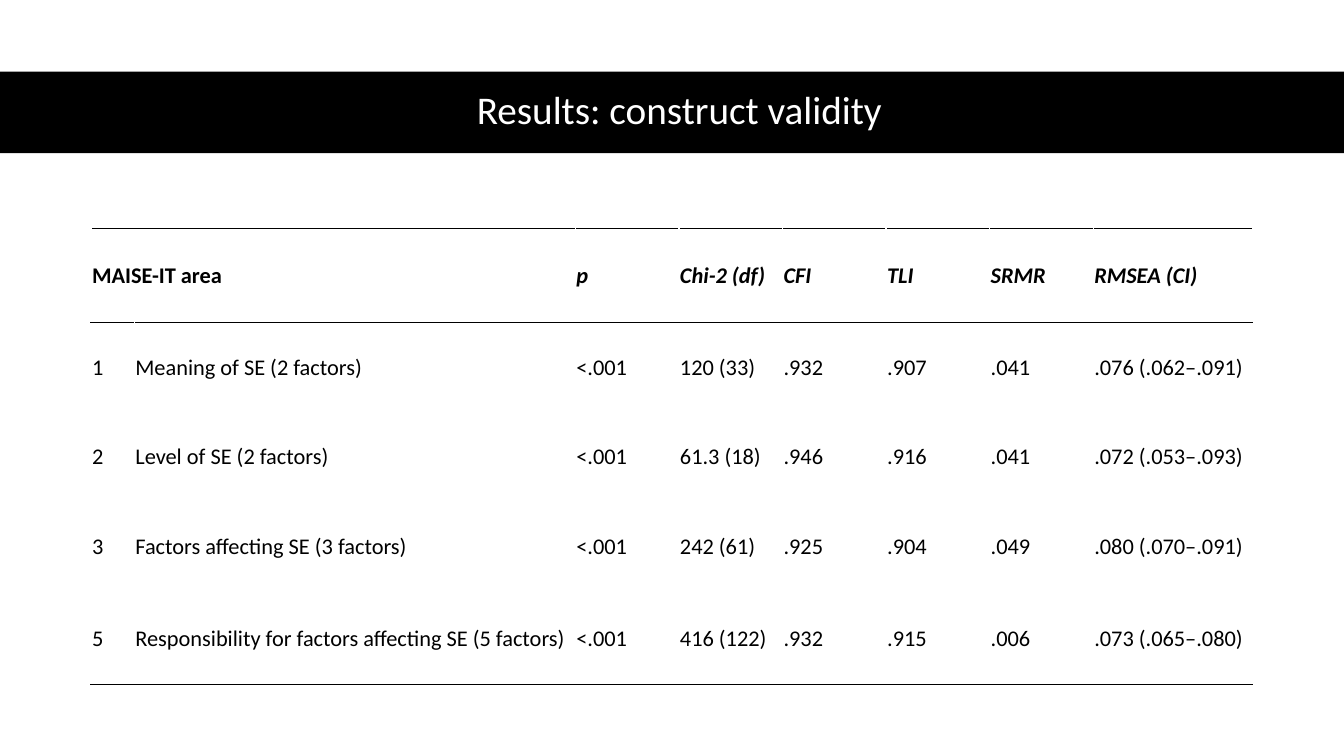
from lxml import etree
from pptx import Presentation
from pptx.enum import shapes, text
from pptx.dml.color import RGBColor
from pptx.oxml import ns
from pptx.util import Pt

TITLE = "Results: construct validity"
HEADER = ["MAISE-IT area", "", "p", "Chi-2 (df)", "CFI", "TLI", "SRMR", "RMSEA (CI)"]
AREAS = [
    ["1", "Meaning of SE (2 factors)", "<.001", "120 (33)", ".932", ".907", ".041", ".076 (.062–.091)"],
    ["2", "Level of SE (2 factors)", "<.001", "61.3 (18)", ".946", ".916", ".041", ".072 (.053–.093)"],
    ["3", "Factors affecting SE (3 factors)", "<.001", "242 (61)", ".925", ".904", ".049", ".080 (.070–.091)"],
    ["5", "Responsibility for factors affecting SE (5 factors)", "<.001", "416 (122)", ".932", ".915", ".006",
     ".073 (.065–.080)"],
]
COLORS = {"ink": "000000", "paper": "FFFFFF"}
FONT = "Calibri"
SLIDE_WIDTH, SLIDE_HEIGHT = 960, 540
BAND_TOP, BAND_HEIGHT = 51.2, 58.2
TABLE_LEFT, TABLE_TOP = 65, 163.5
COLUMN_WIDTHS = [31, 315] + [74] * 5 + [113.5]
ROW_HEIGHTS = [66.8, 64, 64, 64, 66.8]
INSET = 0.75


def color(name):
    return RGBColor.from_string(COLORS[name])


def write(paragraph, words, size, ink, bold=False, italic=False):
    run = paragraph.add_run()
    run.text = words
    font = run.font
    font.name, font.size, font.bold, font.italic = FONT, Pt(size), bold, italic
    font.color.rgb = color(ink)


def add_border(cell, side):
    """Rule one edge of a cell; side is lnT or lnB."""
    properties = cell._tc.get_or_add_tcPr()
    line = etree.SubElement(properties, ns.qn("a:" + side), w=str(Pt(1)))
    fill = etree.SubElement(line, ns.qn("a:solidFill"))
    etree.SubElement(fill, ns.qn("a:srgbClr"), val=COLORS["ink"])


def add_title(slide):
    band = slide.shapes.add_shape(shapes.MSO_SHAPE.RECTANGLE, 0, Pt(BAND_TOP), Pt(SLIDE_WIDTH), Pt(BAND_HEIGHT))
    band.shadow.inherit = False
    band.fill.solid()
    band.fill.fore_color.rgb = color("ink")
    band.line.fill.background()

    title = slide.shapes.title
    title.left, title.top, title.width, title.height = Pt(44), Pt(50.5), Pt(882.5), Pt(BAND_HEIGHT)
    band._element.addnext(title._element)
    frame = title.text_frame
    frame.word_wrap = True
    frame.auto_size = text.MSO_AUTO_SIZE.NONE
    frame.vertical_anchor = text.MSO_ANCHOR.MIDDLE
    paragraph = frame.paragraphs[0]
    paragraph.alignment = text.PP_ALIGN.CENTER
    paragraph.line_spacing = 0.9
    paragraph.space_after = Pt(6)
    write(paragraph, TITLE, 28, "paper")


def add_results(slide):
    rows = [HEADER] + AREAS
    last = len(AREAS)
    table = slide.shapes.add_table(len(rows), len(HEADER), Pt(TABLE_LEFT), Pt(TABLE_TOP),
                                   Pt(sum(COLUMN_WIDTHS)), Pt(sum(ROW_HEIGHTS))).table
    table.first_row = table.horz_banding = False
    for column, width in zip(table.columns, COLUMN_WIDTHS):
        column.width = Pt(width)
    for row, height in zip(table.rows, ROW_HEIGHTS):
        row.height = Pt(height)
    table.cell(0, 0).merge(table.cell(0, 1))

    for i, row in enumerate(rows):
        for j, words in enumerate(row):
            cell = table.cell(i, j)
            cell.margin_left = cell.margin_right = cell.margin_top = Pt(INSET)
            cell.margin_bottom = 0
            cell.vertical_anchor = text.MSO_ANCHOR.MIDDLE
            if i <= 1:
                add_border(cell, "lnT")
            if i in (0, last):
                add_border(cell, "lnB")
            cell.fill.background()
            if not words:
                continue
            paragraph = cell.text_frame.paragraphs[0]
            justified = (i == 0 and j > 2) or (i == last and j > 1)
            paragraph.alignment = text.PP_ALIGN.JUSTIFY if justified else text.PP_ALIGN.LEFT
            write(paragraph, words, 16, "ink", bold=i == 0, italic=i == 0 and j > 0)


def main():
    presentation = Presentation()
    presentation.slide_width, presentation.slide_height = Pt(SLIDE_WIDTH), Pt(SLIDE_HEIGHT)
    slide = presentation.slides.add_slide(presentation.slide_layouts[5])
    add_title(slide)
    add_results(slide)
    presentation.save("out.pptx")


if __name__ == "__main__":
    main()
